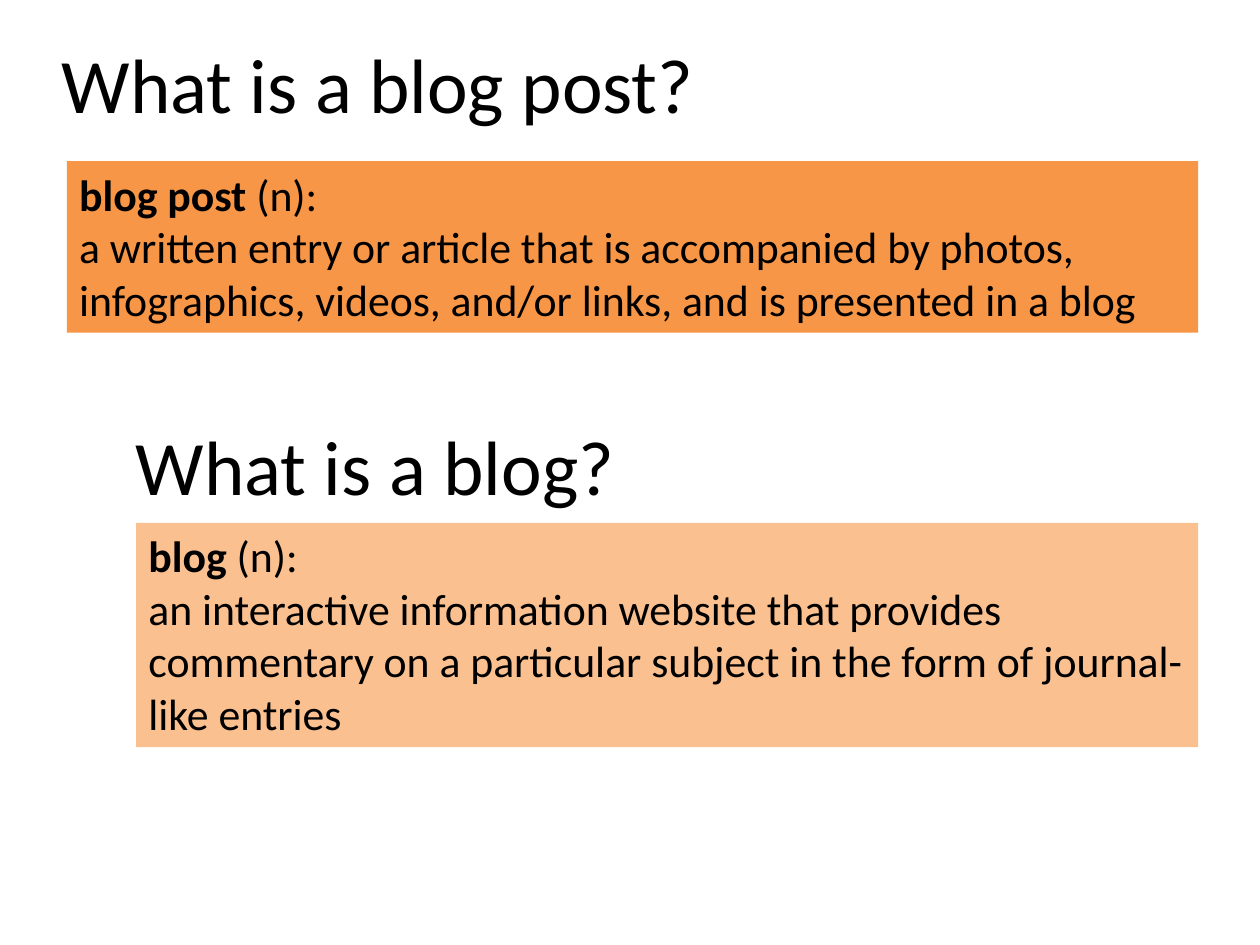
from dataclasses import dataclass

from pptx import Presentation
from pptx.dml.color import RGBColor
from pptx.enum.shapes import MSO_SHAPE
from pptx.enum.text import MSO_ANCHOR, PP_ALIGN
from pptx.util import Inches, Pt

RECT = MSO_SHAPE.RECTANGLE
MIDDLE, TOP = MSO_ANCHOR.MIDDLE, MSO_ANCHOR.TOP
LEFT = PP_ALIGN.LEFT


@dataclass(frozen=True)
class Theme:
    font: str = "Calibri"
    ink: str = "000000"
    head: int = 44
    body: int = 25


THEME = Theme()
WIDE, HIGH = 10, 7.5
RIGHT = 9.51
HEAD_W, HEAD_H = 0.9 * WIDE, HIGH / 6

# Heads are (left, top); boxes are (left, top, height), all ending at RIGHT.
PARTS = [
    {
        "head": "What is a blog post?",
        "head_at": (0.39, 0.03),
        "term": "blog post",
        "text": "a written entry or article that is accompanied by photos, "
                "infographics, videos, and/or links, and is presented in a blog",
        "box_at": (0.53, 1.28, 1.36),
        "fill": "F79646",
    },
    {
        "head": "What is a blog?",
        "head_at": (0.98, 3.06),
        "term": "blog",
        "text": "an interactive information website that provides commentary "
                "on a particular subject in the form of journal-like entries",
        "box_at": (1.08, 4.15, 1.78),
        "fill": "FAC090",
    },
]


def style(para, size):
    para.alignment = LEFT
    para.font.name = THEME.font
    para.font.size = Pt(size)
    para.font.color.rgb = RGBColor.from_string(THEME.ink)


def set_head(shape, part):
    left, top = part["head_at"]
    shape.left, shape.top = Inches(left), Inches(top)
    shape.width, shape.height = Inches(HEAD_W), Inches(HEAD_H)
    frame = shape.text_frame
    frame.word_wrap = True
    frame.vertical_anchor = MIDDLE
    frame.text = part["head"]
    style(frame.paragraphs[0], THEME.head)


def add_box(slide, part):
    left, top, high = part["box_at"]
    box = slide.shapes.add_shape(
        RECT, Inches(left), Inches(top), Inches(RIGHT - left), Inches(high))
    box.shadow.inherit = False
    box.fill.solid()
    box.fill.fore_color.rgb = RGBColor.from_string(part["fill"])
    box.line.fill.background()
    frame = box.text_frame
    frame.word_wrap = True
    frame.vertical_anchor = TOP
    first, last = frame.paragraphs[0], frame.add_paragraph()
    term = first.add_run()
    term.text = part["term"]
    term.font.bold = True
    first.add_run().text = " (n):"
    last.text = part["text"]
    for para in (first, last):
        style(para, THEME.body)


def main():
    deck = Presentation()
    deck.slide_width, deck.slide_height = Inches(WIDE), Inches(HIGH)
    slide = deck.slides.add_slide(deck.slide_layouts[5])
    for i, part in enumerate(PARTS):
        head = slide.shapes.add_textbox(0, 0, 0, 0) if i else slide.shapes.title
        set_head(head, part)
        add_box(slide, part)
    deck.save("out.pptx")


if __name__ == "__main__":
    main()
